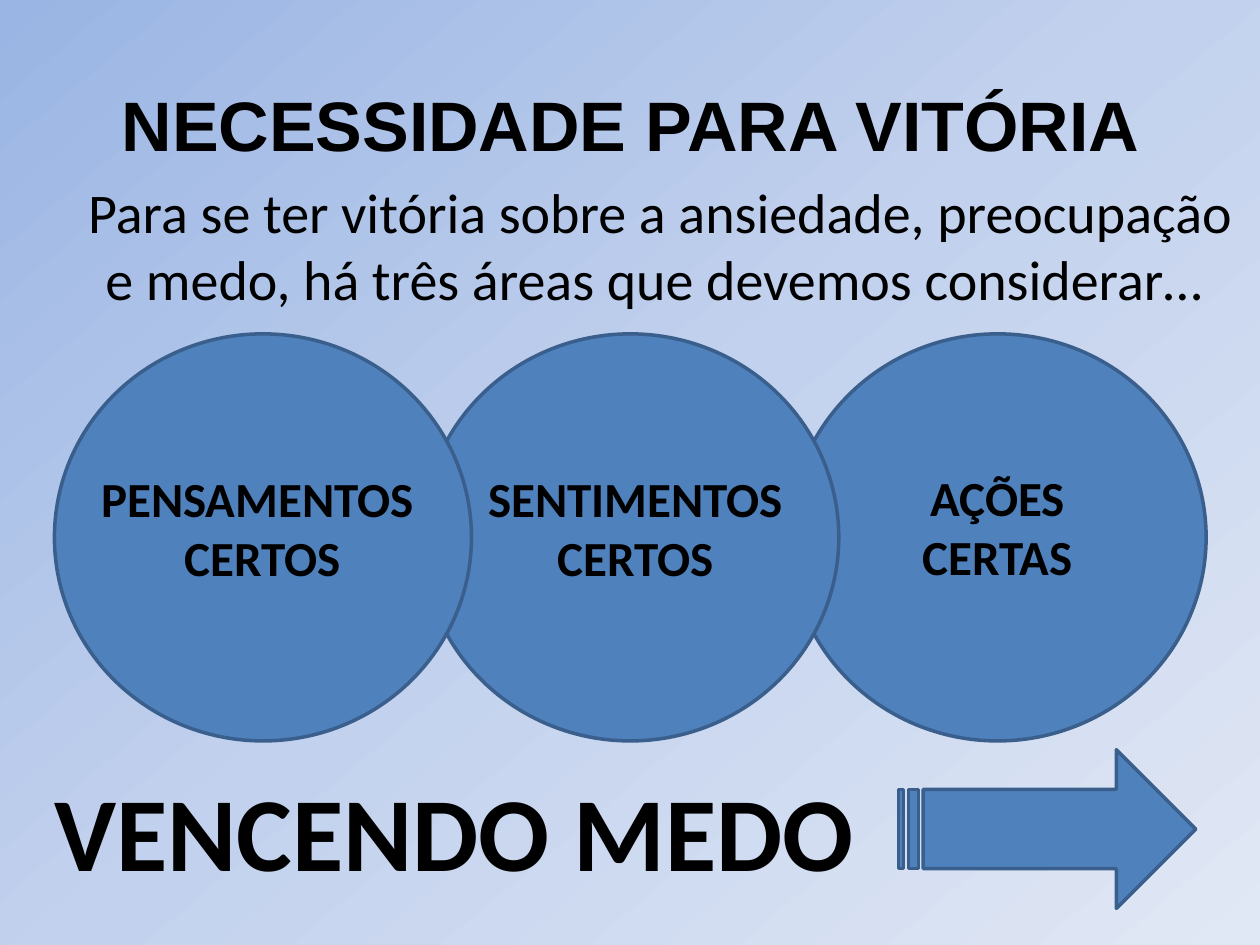
from copy import deepcopy
from dataclasses import dataclass

from pptx import Presentation
from pptx.dml.color import RGBColor
from pptx.enum.shapes import MSO_SHAPE
from pptx.enum.text import MSO_ANCHOR, PP_ALIGN
from pptx.oxml.ns import qn
from pptx.slide import Slide
from pptx.util import Pt

BLACK = RGBColor(0x00, 0x00, 0x00)
BLUE = RGBColor(0x4F, 0x81, 0xBD)
OUTLINE = RGBColor(0x3A, 0x5F, 0x8C)
BACKDROP = (
    (0, RGBColor(0x9A, 0xB5, 0xE4)),
    (0.5, RGBColor(0xC2, 0xD1, 0xED)),
    (1, RGBColor(0xE1, 0xE8, 0xF5)),
)


@dataclass(frozen=True)
class Box:
    """A frame in points."""

    left: float
    top: float
    width: float
    height: float

    def lengths(self) -> tuple[Pt, Pt, Pt, Pt]:
        """Return the frame as lengths."""
        return Pt(self.left), Pt(self.top), Pt(self.width), Pt(self.height)


@dataclass(frozen=True)
class Label:
    """Centred lines of text in a frame."""

    box: Box
    lines: tuple[str, ...]
    size: float
    font: str = "Calibri"
    bold: bool = True
    inset_top: float = 3.6


@dataclass(frozen=True)
class Area:
    """A circle with its caption."""

    circle: Box
    caption: Label


def make_area(left: float, lines: tuple[str, ...], dx: float = 0, dy: float = 0) -> Area:
    """Place an area at its left edge, with its caption moved by dx and dy."""
    caption_box = Box(left + dx, 264.2 + dy, 238.3, 74.9)
    return Area(Box(left, 190.8, 238.3, 232.6), Label(caption_box, lines, 28))


TITLE = Label(Box(20.2, 38.9, 680.4, 72.7), ("NECESSIDADE PARA VITÓRIA",), 40, "Arial", inset_top=7.7)
INTRO = Label(
    Box(35.3, 97.9, 684.7, 90.7),
    ("Para se ter vitória sobre a ansiedade, preocupação e medo, há três áreas que devemos considerar… ",),
    32,
    bold=False,
)
ARROW = Box(513.4, 428.4, 169.9, 90.7)
OUTCOME = Label(Box(2.9, 434.2, 513.4, 90.7), ("VENCENDO MEDO",), 60)
ACTIONS = make_area(450.9, ("AÇÕES", "CERTAS"), dy=-0.7)
FEELINGS = make_area(241, ("SENTIMENTOS", "CERTOS"), dx=3)
THOUGHTS = make_area(31.1, ("PENSAMENTOS ", "CERTOS"))


def paint_background(slide: Slide) -> None:
    """Fill the slide with the diagonal gradient."""
    fill = slide.background.fill
    fill.gradient()
    fill.gradient_angle = 310
    stop_list = slide.element.find(f".//{qn('a:gsLst')}")
    stop_list.append(deepcopy(stop_list[-1]))
    for stop, (position, color) in zip(fill.gradient_stops, BACKDROP):
        stop.position = position
        stop.color.rgb = color


def draw_shape(slide: Slide, kind: MSO_SHAPE, box: Box) -> None:
    """Draw a blue outlined shape."""
    shape = slide.shapes.add_shape(kind, *box.lengths())
    shape.shadow.inherit = False
    shape.fill.solid()
    shape.fill.fore_color.rgb = BLUE
    shape.line.color.rgb = OUTLINE
    shape.line.width = Pt(2)


def draw_label(slide: Slide, label: Label) -> None:
    """Write the lines of a label, one paragraph each."""
    frame = slide.shapes.add_textbox(*label.box.lengths()).text_frame
    frame.word_wrap = True
    frame.vertical_anchor = MSO_ANCHOR.TOP
    frame.margin_top = Pt(label.inset_top)
    for index, line in enumerate(label.lines):
        paragraph = frame.add_paragraph() if index else frame.paragraphs[0]
        paragraph.alignment = PP_ALIGN.CENTER
        run = paragraph.add_run()
        run.text = line
        run.font.name = label.font
        run.font.size = Pt(label.size)
        run.font.bold = label.bold
        run.font.color.rgb = BLACK


def main() -> None:
    """Build the slide and save it."""
    presentation = Presentation()
    presentation.slide_width = Pt(720)
    presentation.slide_height = Pt(540)
    slide = presentation.slides.add_slide(presentation.slide_layouts[6])
    paint_background(slide)
    draw_label(slide, INTRO)
    draw_label(slide, TITLE)
    draw_shape(slide, MSO_SHAPE.STRIPED_RIGHT_ARROW, ARROW)
    draw_label(slide, OUTCOME)
    for area in (ACTIONS, FEELINGS, THOUGHTS):
        draw_shape(slide, MSO_SHAPE.OVAL, area.circle)
        draw_label(slide, area.caption)
    presentation.save("out.pptx")


if __name__ == "__main__":
    main()
